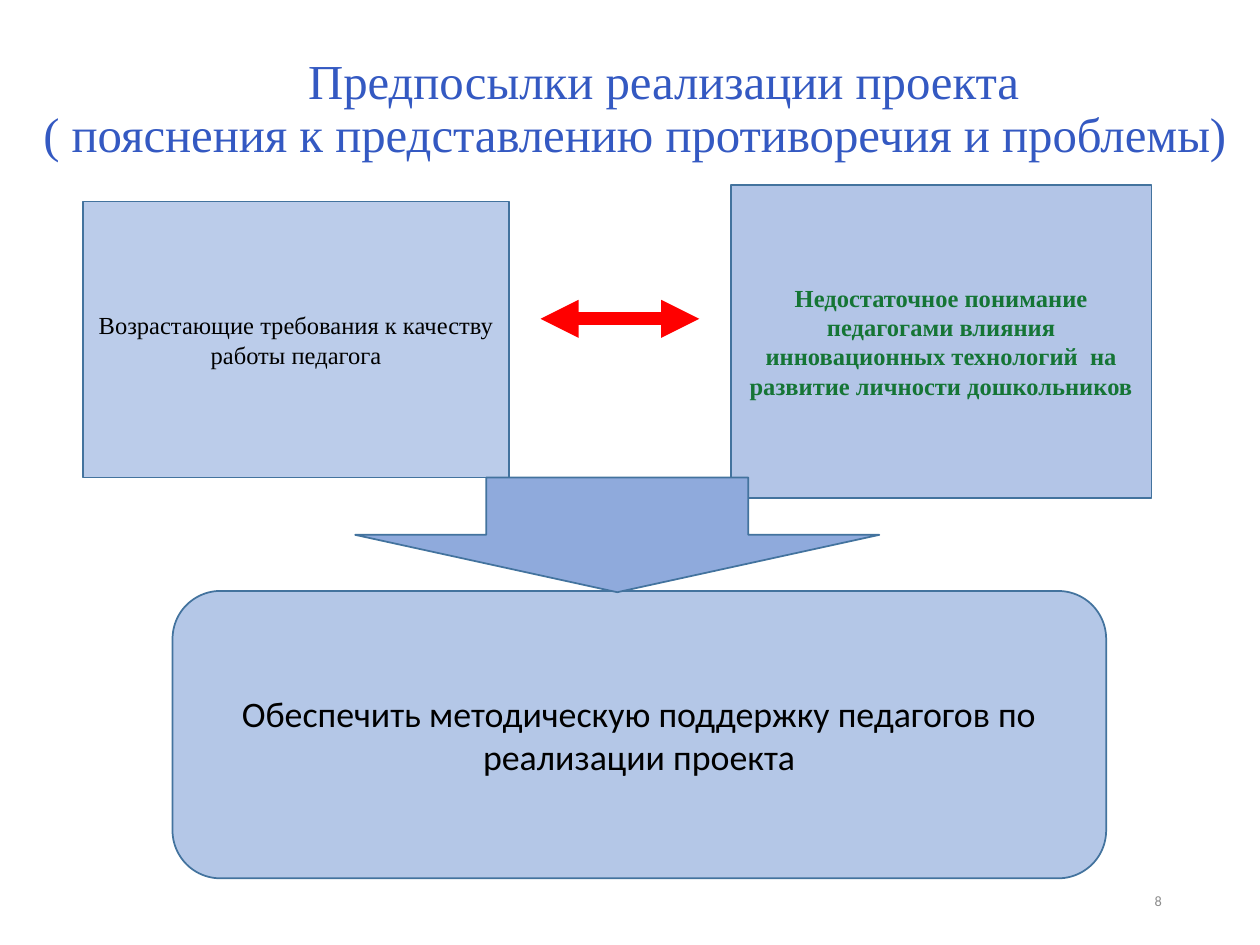
from lxml import etree
from pptx import Presentation
from pptx.dml.color import RGBColor
from pptx.enum.shapes import MSO_CONNECTOR, MSO_SHAPE
from pptx.enum.text import MSO_ANCHOR, PP_ALIGN
from pptx.oxml.ns import qn
from pptx.util import Pt

RECTANGLE = MSO_SHAPE.RECTANGLE
ROUNDED = MSO_SHAPE.ROUNDED_RECTANGLE
DOWN_ARROW = MSO_SHAPE.DOWN_ARROW
STRAIGHT = MSO_CONNECTOR.STRAIGHT
MIDDLE = MSO_ANCHOR.MIDDLE
CENTER = PP_ALIGN.CENTER
RIGHT = PP_ALIGN.RIGHT

COLORS = {
    "title": "3459C2",
    "panel": "8FAADC",
    "goal": "B4C7E7",
    "outline": "43739E",
    "conflict": "FF0000",
    "problem": "157535",
    "body": "000000",
    "number": "8C8C8C",
}
SERIF = "Times New Roman"
SANS = "Calibri"


def rgb(name):
    return RGBColor.from_string(COLORS[name])


class SlideBuilder:
    outline_width = Pt(1)

    def __init__(self, slide):
        self.slide = slide

    def fill_text(self, owner, lines, size, color, font=SERIF, bold=False,
                  align=CENTER, spacing=1.0, first_indent=0):
        frame = owner.text_frame
        for name, value in {"word_wrap": True, "vertical_anchor": MIDDLE}.items():
            setattr(frame, name, value)
        run_format = {"name": font, "size": Pt(size), "bold": bold}
        for index, line in enumerate(lines):
            paragraph = frame.paragraphs[0] if index == 0 else frame.add_paragraph()
            for name, value in {"alignment": align, "line_spacing": spacing}.items():
                setattr(paragraph, name, value)
            if index == 0 and first_indent:
                paragraph._p.get_or_add_pPr().set("marL", str(Pt(first_indent)))
            run = paragraph.add_run()
            run.text = line
            for name, value in run_format.items():
                setattr(run.font, name, value)
            run.font.color.rgb = rgb(color)

    def text(self, box, lines, **style):
        label = self.slide.shapes.add_textbox(*map(Pt, box))
        self.fill_text(label, lines, **style)

    def block(self, kind, box, fill, opacity=100):
        block = self.slide.shapes.add_shape(kind, *map(Pt, box))
        block.shadow.inherit = False
        block.fill.solid()
        block.fill.fore_color.rgb = rgb(fill)
        if opacity < 100:
            color = block._element.spPr.find(qn("a:solidFill"))[0]
            etree.SubElement(color, qn("a:alpha"), val=str(opacity * 1000))
        block.line.color.rgb = rgb("outline")
        block.line.width = self.outline_width
        return block

    def double_arrow(self, left, right, y, color, width):
        arrow = self.slide.shapes.add_connector(
            STRAIGHT, Pt(left), Pt(y), Pt(right), Pt(y))
        arrow.line.color.rgb = rgb(color)
        arrow.line.width = Pt(width)
        outline = arrow._element.spPr.find(qn("a:ln"))
        for end in ("a:headEnd", "a:tailEnd"):
            etree.SubElement(outline, qn(end), type="triangle")
        etree.SubElement(arrow._element.spPr, qn("a:effectLst"))


def main():
    deck = Presentation()
    deck.slide_width, deck.slide_height = Pt(720), Pt(540)
    builder = SlideBuilder(deck.slides.add_slide(deck.slide_layouts[6]))

    builder.text((509, 500.4, 162, 28.8), ["8"], size=8.2, color="number",
                 font=SANS, align=RIGHT)
    builder.text((11.5, 10.8, 702.7, 104.4),
                 ["Предпосылки реализации проекта",
                  "( пояснения к представлению противоречия и проблемы)"],
                 size=27.9, color="title", spacing=0.9, first_indent=33)

    demands = builder.block(RECTANGLE, (47.5, 115.2, 243.4, 157.7), "panel", 60)
    builder.fill_text(demands, ["Возрастающие требования к качеству работы педагога"],
                      size=14, color="body")
    problem = builder.block(RECTANGLE, (417.6, 105.8, 240.5, 178.6), "panel", 68)
    builder.fill_text(problem,
                      ["Недостаточное понимание педагогами влияния "
                       "инновационных технологий  на развитие личности дошкольников"],
                      size=14, color="problem", bold=True)
    builder.double_arrow(308.9, 399.6, 182.2, "conflict", 7.25)

    goal = builder.block(ROUNDED, (98.6, 337.7, 533.5, 164.2), "goal")
    builder.fill_text(goal,
                      ["Обеспечить методическую поддержку педагогов по реализации проекта"],
                      size=20.5, color="body", font=SANS)
    builder.block(DOWN_ARROW, (203, 272.9, 299.5, 65.5), "panel")

    deck.save("out.pptx")


if __name__ == "__main__":
    main()
